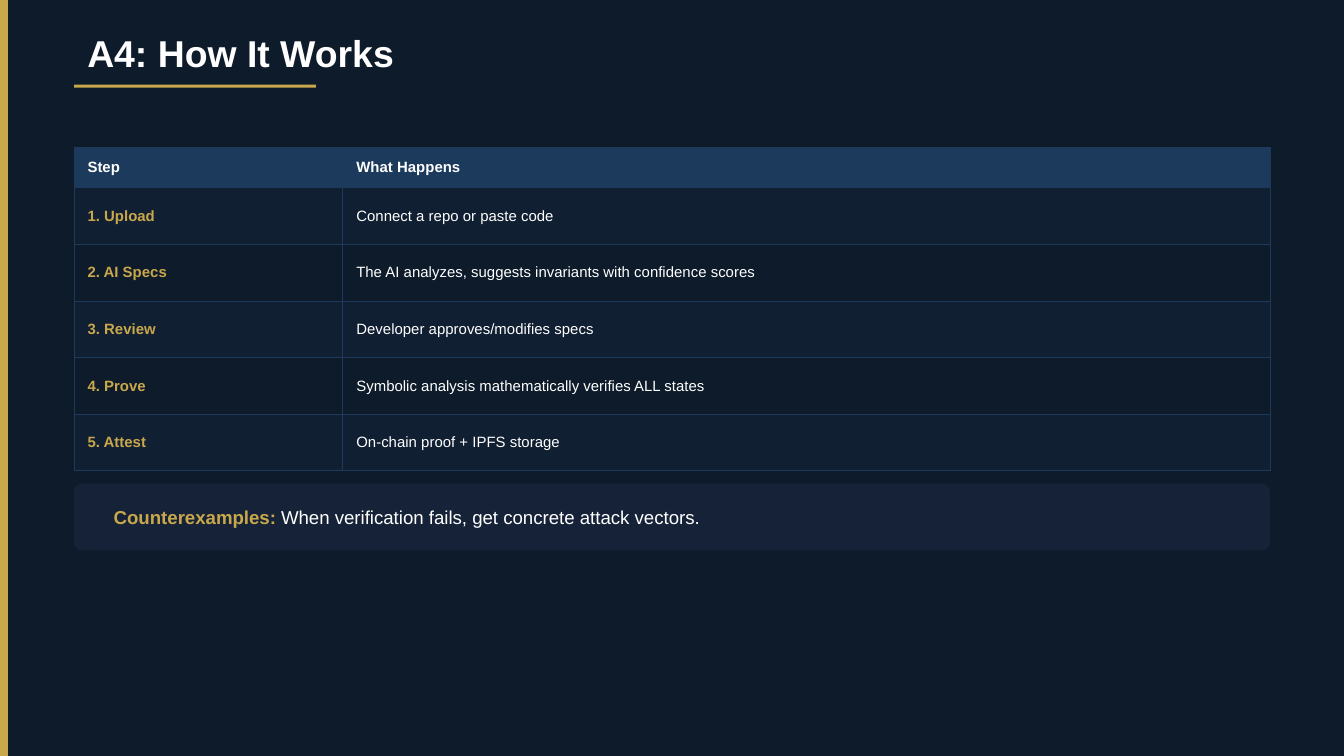
"""Build the "A4: How It Works" slide with its step table and callout."""
from dataclasses import dataclass
from typing import NamedTuple

from lxml.etree import SubElement
from pptx import Presentation
from pptx.dml.color import RGBColor as Rgb
from pptx.enum.shapes import MSO_SHAPE as Preset
from pptx.enum.text import MSO_ANCHOR as Anchor
from pptx.oxml.ns import qn
from pptx.slide import Slide
from pptx.table import _Cell as Cell
from pptx.text.text import TextFrame
from pptx.util import Cm, Pt


@dataclass(frozen=True)
class Theme:
    """Colours, font and type sizes of the slide."""
    night: str = "0D1B2A"
    gold: str = "C9A84C"
    white: str = "FFFFFF"
    header: str = "1B3A5C"
    band: str = "111F33"
    border: str = "1E3A5A"
    callout: str = "152238"
    font: str = "Arial"
    title_size: float = 20
    table_size: float = 8
    callout_size: float = 10
    border_width: float = 0.5


class Box(NamedTuple):
    """Position and size in centimetres."""
    left: float
    top: float
    width: float
    height: float


class Phrase(NamedTuple):
    """A piece of text with its own look."""
    text: str
    size: float
    color: str
    bold: bool = False


class Step(NamedTuple):
    """One row of the step table."""
    name: str
    action: str


THEME = Theme()
MARGIN, CONTENT_WIDTH = 1.4, 22.6
COLUMN_WIDTHS = (5.08, CONTENT_WIDTH - 5.08)
HEADER_HEIGHT, STEP_HEIGHT = 0.76, 1.07
HEADINGS = Step("Step", "What Happens")
STEPS = (
    Step("1. Upload", "Connect a repo or paste code"),
    Step("2. AI Specs", "The AI analyzes, suggests invariants with confidence scores"),
    Step("3. Review", "Developer approves/modifies specs"),
    Step("4. Prove", "Symbolic analysis mathematically verifies ALL states"),
    Step("5. Attest", "On-chain proof + IPFS storage"),
)


def lengths(box: Box) -> list[Cm]:
    """Convert a box to slide lengths."""
    return [Cm(value) for value in box]


def write(frame: TextFrame, *phrases: Phrase) -> None:
    """Add phrases as runs of the first paragraph."""
    for phrase in phrases:
        run = frame.paragraphs[0].add_run()
        run.text = phrase.text
        run.font.name = THEME.font
        run.font.size = Pt(phrase.size)
        run.font.bold = phrase.bold
        run.font.color.rgb = Rgb.from_string(phrase.color)


def add_panel(slide: Slide, box: Box, color: str, corner: float = 0) -> None:
    """Draw a flat panel, rounded when a corner ratio is given."""
    preset = Preset.ROUNDED_RECTANGLE if corner else Preset.RECTANGLE
    panel = slide.shapes.add_shape(preset, *lengths(box))
    if corner:
        panel.adjustments[0] = corner
    panel.shadow.inherit = False
    panel.fill.solid()
    panel.fill.fore_color.rgb = Rgb.from_string(color)
    panel.line.fill.background()


def add_text(slide: Slide, box: Box, *phrases: Phrase) -> None:
    """Place a vertically centred line of text."""
    frame = slide.shapes.add_textbox(*lengths(box)).text_frame
    frame.word_wrap = True
    frame.vertical_anchor = Anchor.MIDDLE
    write(frame, *phrases)


def fill_cell(cell: Cell, phrase: Phrase, color: str) -> None:
    """Write, border and fill one table cell."""
    write(cell.text_frame, phrase)
    cell.vertical_anchor = Anchor.MIDDLE
    properties = cell._tc.get_or_add_tcPr()
    for side in ("a:lnL", "a:lnR", "a:lnT", "a:lnB"):
        edge = SubElement(properties, qn(side), w=str(Pt(THEME.border_width)))
        SubElement(SubElement(edge, qn("a:solidFill")), qn("a:srgbClr"), val=THEME.border)
    cell.fill.solid()
    cell.fill.fore_color.rgb = Rgb.from_string(color)


def add_steps(slide: Slide, top: float) -> None:
    """Draw the table of steps with alternating bands."""
    height = HEADER_HEIGHT + len(STEPS) * STEP_HEIGHT
    box = Box(MARGIN, top, CONTENT_WIDTH, height)
    table = slide.shapes.add_table(len(STEPS) + 1, len(HEADINGS), *lengths(box)).table
    for column, width in zip(table.columns, COLUMN_WIDTHS):
        column.width = Cm(width)
    for index, step in enumerate((HEADINGS, *STEPS)):
        heading = index == 0
        table.rows[index].height = Cm(HEADER_HEIGHT if heading else STEP_HEIGHT)
        fill = THEME.header if heading else THEME.band if index % 2 else THEME.night
        name_color = THEME.white if heading else THEME.gold
        fill_cell(table.cell(index, 0),
                  Phrase(step.name, THEME.table_size, name_color, True), fill)
        fill_cell(table.cell(index, 1),
                  Phrase(step.action, THEME.table_size, THEME.white, heading), fill)


def main() -> None:
    """Assemble and save the slide."""
    deck = Presentation()
    deck.slide_width, deck.slide_height = Cm(25.4), Cm(14.29)
    slide = deck.slides.add_slide(deck.slide_layouts[6])
    slide.background.fill.solid()
    slide.background.fill.fore_color.rgb = Rgb.from_string(THEME.night)

    add_panel(slide, Box(0, 0, 0.15, 14.29), THEME.gold)
    add_text(slide, Box(MARGIN, 0.46, CONTENT_WIDTH, 1.07),
             Phrase("A4: How It Works", THEME.title_size, THEME.white, True))
    add_panel(slide, Box(MARGIN, 1.6, 4.57, 0.06), THEME.gold)
    add_steps(slide, 2.79)

    callout = Box(MARGIN, 9.14, CONTENT_WIDTH, 1.27)
    add_panel(slide, callout, THEME.callout, 0.12)
    add_text(slide, callout._replace(left=MARGIN + 0.5, width=CONTENT_WIDTH - 1),
             Phrase("Counterexamples: ", THEME.callout_size, THEME.gold, True),
             Phrase("When verification fails, get concrete attack vectors.",
                    THEME.callout_size, THEME.white))
    deck.save("out.pptx")


if __name__ == "__main__":
    main()
